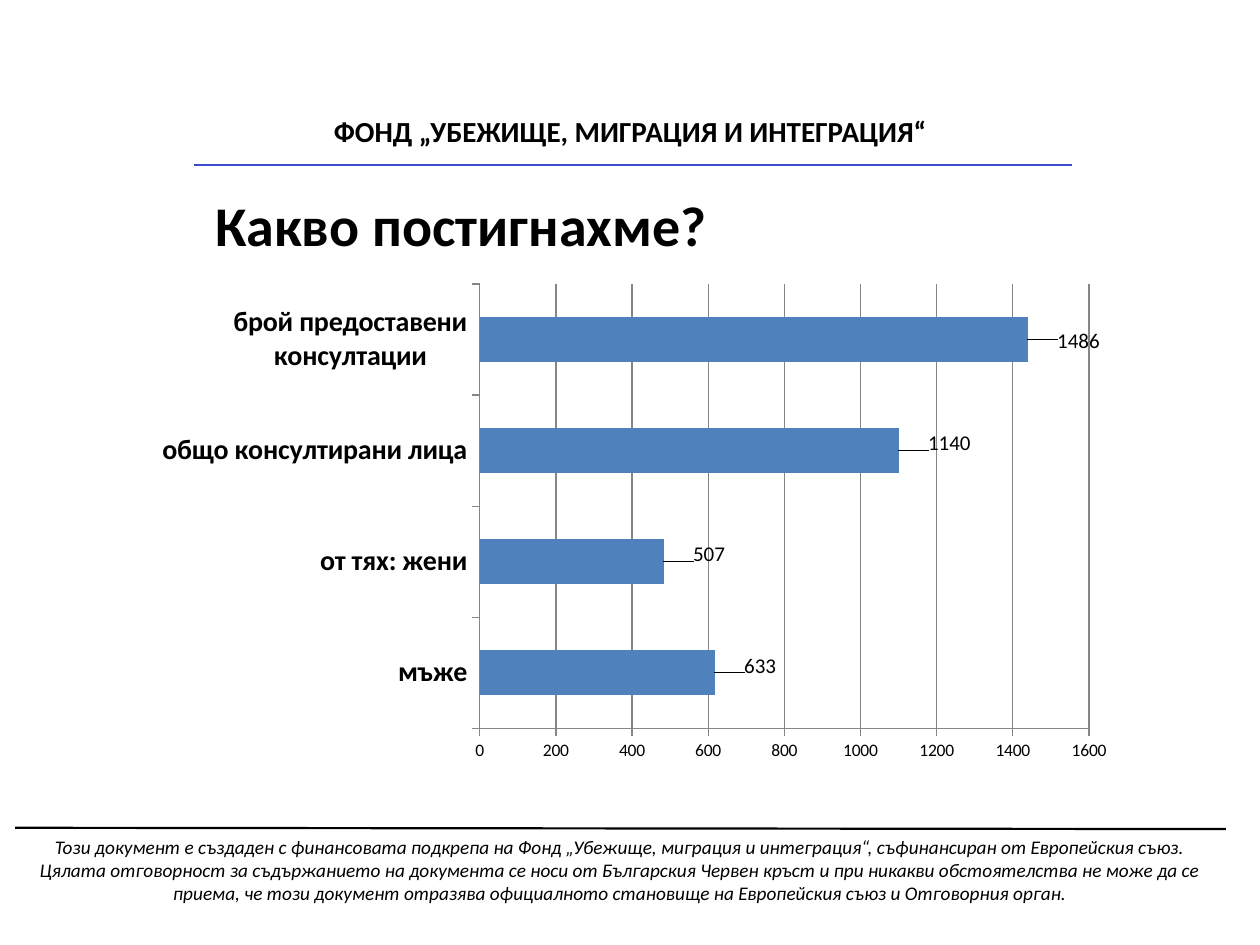
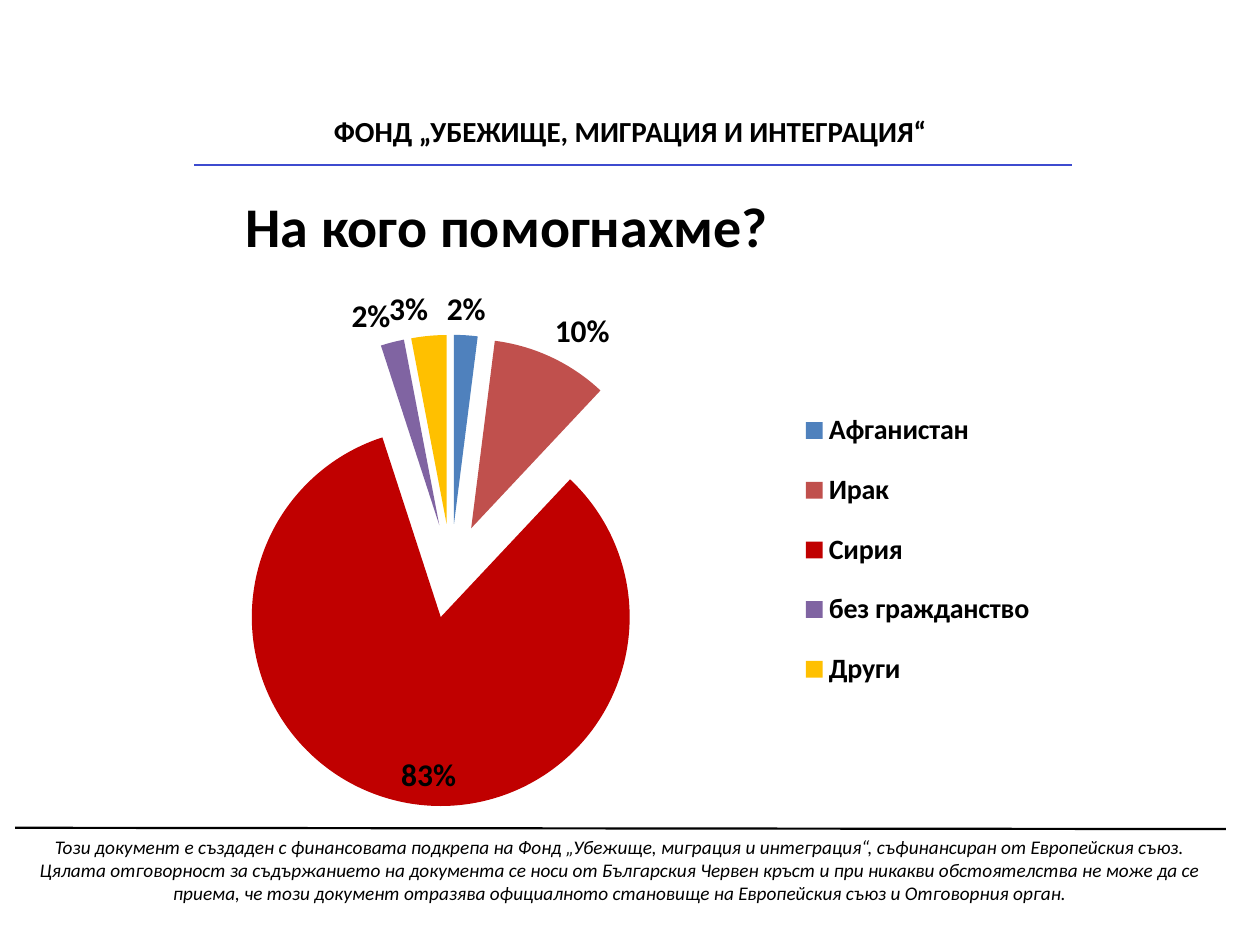
import pptx
import pptx.chart.data
import pptx.dml.color
import pptx.enum.chart
import pptx.enum.shapes
import pptx.enum.text
import pptx.oxml
import pptx.oxml.ns
import pptx.util

Inches = pptx.util.Inches
Pt = pptx.util.Pt
qn = pptx.oxml.ns.qn
Align = pptx.enum.text.PP_ALIGN
Anchor = pptx.enum.text.MSO_ANCHOR
ChartType = pptx.enum.chart.XL_CHART_TYPE
LabelPosition = pptx.enum.chart.XL_LABEL_POSITION

FONT = "Calibri"
COLORS = {
    "text": "000000",
    "header_rule": "3D4BCF",
    "footer_rule": "000000",
    "grid": "868686",
    "blue": "4F81BD",
    "brick": "C0504D",
    "red": "C00000",
    "violet": "8064A2",
    "amber": "FFC000",
}
FUND = "ФОНД „УБЕЖИЩЕ, МИГРАЦИЯ И ИНТЕГРАЦИЯ“"
DISCLAIMER = (
    "Този документ е създаден с финансовата подкрепа на Фонд „Убежище, миграция "
    "и интеграция“, съфинансиран от Европейския съюз. Цялата отговорност за "
    "съдържанието на документа се носи от Българския Червен кръст и при никакви "
    "обстоятелства не може да се приема, че този документ отразява официалното "
    "становище на Европейския съюз и Отговорния орган."
)
# Category, bar value, shown figure, label shift (x, y) as a share of the chart
RESULTS = [
    ("мъже", 617, "633", (0.025, -0.014)),
    ("от тях: жени", 483, "507", (0.025, -0.014)),
    ("общо консултирани лица", 1100, "1140", (0.025, -0.014)),
    ("брой предоставени консултации", 1439, "1486", (0.025, 0.004)),
]
ORIGINS = [
    ("Афганистан", 2, "blue"),
    ("Ирак", 10, "brick"),
    ("Сирия", 83, "red"),
    ("без гражданство", 2, "violet"),
    ("Други", 3, "amber"),
]


def rgb(color):
    return pptx.dml.color.RGBColor.from_string(COLORS[color])


def set_font(font, size, bold=False, italic=False, color="text"):
    font.name, font.size = FONT, Pt(size)
    font.bold, font.italic = bold, italic
    font.color.rgb = rgb(color)


def add_text(slide, box, text, align=Align.LEFT, anchor=Anchor.TOP, **font_format):
    frame = slide.shapes.add_textbox(*map(Inches, box)).text_frame
    frame.word_wrap = True
    frame.vertical_anchor = anchor
    paragraph = frame.paragraphs[0]
    paragraph.alignment = align
    run = paragraph.add_run()
    run.text = text
    set_font(run.font, **font_format)


def add_rule(slide, start, end, color):
    rule = slide.shapes.add_connector(
        pptx.enum.shapes.MSO_CONNECTOR.STRAIGHT, *map(Inches, start + end))
    rule.line.color.rgb = rgb(color)
    rule.line.width = Pt(1.25)
    rule._element.spPr.append(pptx.oxml.parse_xml(
        f'<a:effectLst {pptx.oxml.ns.nsdecls("a")}/>'))


def add_header(slide, box):
    left, top, width, height = box
    add_text(slide, box, FUND, align=Align.CENTER, anchor=Anchor.MIDDLE,
             size=16.6, bold=True)
    rule_y = top + height + 0.07
    add_rule(slide, (left + 1.04, rule_y), (left + width - 0.99, rule_y), "header_rule")


def add_footer(slide, box):
    left, top, width, _ = box
    add_text(slide, box, DISCLAIMER, align=Align.CENTER, size=11, italic=True)
    add_rule(slide, (left, top - 0.01), (left + width, top), "footer_rule")


def add_framed_slide(prs, title, title_box):
    slide = prs.slides.add_slide(prs.slide_layouts[6])
    add_header(slide, (0.5, 0.84, 9, 0.4))
    add_footer(slide, (0.12, 6.58, 9.61, 0.77))
    add_text(slide, title_box, title, size=32, bold=True)
    return slide


def set_layout(parent, index, target=None, **shares):
    """Give a chart part a manual place, in shares of the chart's size."""
    for old in parent.findall(qn("c:layout")):
        parent.remove(old)
    parts = {}
    if target:
        parts["layoutTarget"] = target
    if "w" in shares:
        parts.update(xMode="edge", yMode="edge")
    parts.update(shares)
    children = "".join(f'<c:{tag} val="{value}"/>' for tag, value in parts.items())
    parent.insert(index, pptx.oxml.parse_xml(
        f'<c:layout {pptx.oxml.ns.nsdecls("c")}>'
        f'<c:manualLayout>{children}</c:manualLayout></c:layout>'))


def add_one_series_chart(slide, box, chart_type, categories, values):
    data = pptx.chart.data.CategoryChartData()
    data.categories = categories
    data.add_series("Series 1", values)
    chart = slide.shapes.add_chart(chart_type, *map(Inches, box), data).chart
    set_font(chart.font, 10)
    chart.has_title = False
    chart.has_legend = False
    return chart, chart.plots[0].series[0]


def add_results_chart(slide, box):
    categories, values, figures, shifts = zip(*RESULTS)
    chart, bars = add_one_series_chart(
        slide, box, ChartType.BAR_CLUSTERED, categories, values)
    set_layout(chart._chartSpace.chart.plotArea, 0, "inner",
               x=0.342, y=0.019, w=0.62, h=0.895)
    chart.plots[0].gap_width = 150
    chart.plots[0].vary_by_categories = False
    bars.format.fill.solid()
    bars.format.fill.fore_color.rgb = rgb("blue")

    for axis in (chart.category_axis, chart.value_axis):
        axis.format.line.color.rgb = rgb("grid")
        axis.major_tick_mark = pptx.enum.chart.XL_TICK_MARK.OUTSIDE
    set_font(chart.category_axis.tick_labels.font, 16, bold=True)
    set_font(chart.value_axis.tick_labels.font, 10)
    chart.value_axis.minimum_scale = 0
    chart.value_axis.maximum_scale = 1600
    chart.value_axis.major_unit = 200
    chart.value_axis.has_major_gridlines = True
    chart.value_axis.major_gridlines.format.line.color.rgb = rgb("grid")

    bars.data_labels.show_value = True
    for index, (figure, (dx, dy)) in enumerate(zip(figures, shifts)):
        label = bars.points[index].data_label
        run = label.text_frame.paragraphs[0].add_run()
        run.text = figure
        set_font(run.font, 12)
        label.position = LabelPosition.OUTSIDE_END
        set_layout(bars.data_labels._element.findall(qn("c:dLbl"))[index], 1, x=dx, y=dy)


def add_origins_chart(slide, box):
    countries, shares, colors = zip(*ORIGINS)
    chart, pie = add_one_series_chart(slide, box, ChartType.PIE, countries, shares)
    set_layout(chart._chartSpace.chart.plotArea, 0, "inner",
               x=0.079, y=0.113, w=0.541, h=0.773)
    pie._element.find(qn("c:tx")).addnext(pptx.oxml.parse_xml(
        f'<c:explosion {pptx.oxml.ns.nsdecls("c")} val="25"/>'))
    for index, color in enumerate(colors):
        fill = pie.points[index].format.fill
        fill.solid()
        fill.fore_color.rgb = rgb(color)

    labels = pie.data_labels
    labels.show_value = False
    labels.show_percentage = True
    labels.number_format = "0%"
    labels.number_format_is_linked = False
    labels.position = LabelPosition.OUTSIDE_END
    set_font(labels.font, 18, bold=True)
    largest = pie.points[shares.index(max(shares))].data_label
    set_font(largest.font, 18, bold=True)
    largest.position = LabelPosition.INSIDE_END
    largest_xml = labels._element.find(qn("c:dLbl"))
    largest_xml.find(qn("c:showVal")).set("val", "0")
    largest_xml.find(qn("c:showPercent")).set("val", "1")

    chart.has_legend = True
    chart.legend.position = pptx.enum.chart.XL_LEGEND_POSITION.RIGHT
    chart.legend.include_in_layout = False
    set_font(chart.legend.font, 16, bold=True)
    set_layout(chart.legend._element, 1, x=0.69, y=0.2, w=0.26, h=0.53)


def main():
    prs = pptx.Presentation()
    prs.slide_width, prs.slide_height = Inches(10), Inches(7.5)
    results = add_framed_slide(prs, "Какво постигнахме?", (1.61, 1.46, 6.14, 0.64))
    add_results_chart(results, (1.14, 2.18, 7.8, 3.94))
    origins = add_framed_slide(prs, "На кого помогнахме?", (1.85, 1.47, 6.54, 0.64))
    add_origins_chart(origins, (0.83, 2.11, 7.87, 4.85))
    prs.save("out.pptx")


if __name__ == "__main__":
    main()
